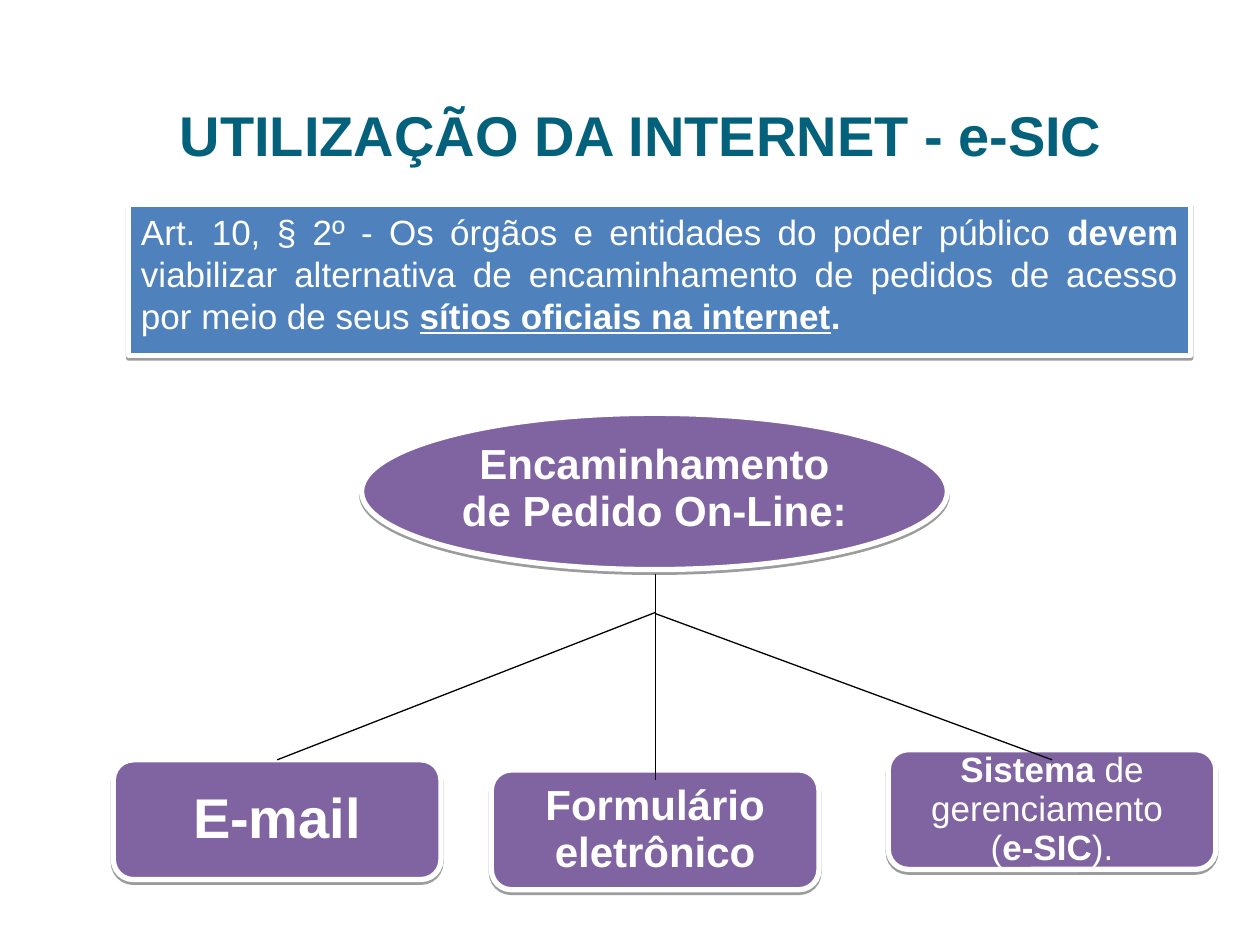
from lxml.etree import SubElement
from pptx import Presentation
from pptx.dml.color import RGBColor
from pptx.enum.shapes import MSO_CONNECTOR as Connector, MSO_SHAPE as Shape
from pptx.enum.text import MSO_ANCHOR as Anchor, MSO_AUTO_SIZE as AutoSize, PP_ALIGN as Align
from pptx.oxml.ns import qn
from pptx.util import Pt

COLORS = {
    "title": "04617B",
    "article": "4F81BD",
    "node": "8064A2",
    "white": "FFFFFF",
    "black": "000000",
}


class SlideBuilder:
    font_name = "Arial"
    outline_width = 3
    connector_width = 0.75
    node_spacing = 0.93

    def __init__(self, slide):
        self.slide = slide

    def color(self, name):
        return RGBColor.from_string(COLORS[name])

    def format_run(self, run, size, color, bold=False, underline=None):
        run.font.name = self.font_name
        run.font.size = Pt(size)
        run.font.color.rgb = self.color(color)
        run.font.bold = bold
        run.font.underline = underline

    def title(self, text, left, top, width, height, size):
        title = self.slide.shapes.title
        title.left, title.top, title.width, title.height = map(Pt, (left, top, width, height))
        frame = title.text_frame
        frame.text = text
        frame.auto_size = AutoSize.NONE
        frame.word_wrap = False
        frame.vertical_anchor = Anchor.MIDDLE
        paragraph = frame.paragraphs[0]
        paragraph.alignment = Align.CENTER
        self.format_run(paragraph.runs[0], size, "title", bold=True)

    def add_shadow(self, shape):
        shape.shadow.inherit = False
        effects = shape.element.spPr.find(qn("a:effectLst"))
        shadow = SubElement(effects, qn("a:outerShdw"), dist=str(Pt(1.6)),
                            dir="5400000", rotWithShape="0")
        color = SubElement(shadow, qn("a:srgbClr"), val=COLORS["black"])
        SubElement(color, qn("a:alpha"), val="38000")

    def box(self, kind, left, top, width, height, fill, paragraphs, size,
            anchor=Anchor.MIDDLE, align=Align.CENTER, spacing=None):
        shape = self.slide.shapes.add_shape(kind, *map(Pt, (left, top, width, height)))
        shape.fill.solid()
        shape.fill.fore_color.rgb = self.color(fill)
        shape.line.color.rgb = self.color("white")
        shape.line.width = Pt(self.outline_width)
        self.add_shadow(shape)
        frame = shape.text_frame
        frame.word_wrap = True
        frame.vertical_anchor = anchor
        for index, parts in enumerate(paragraphs):
            paragraph = frame.add_paragraph() if index else frame.paragraphs[0]
            paragraph.alignment = align
            paragraph.line_spacing = spacing
            for text, bold, underline in parts:
                run = paragraph.add_run()
                run.text = text
                self.format_run(run, size, "white", bold, underline)
        return shape

    def node(self, kind, left, top, width, height, paragraphs, size, anchor=Anchor.MIDDLE):
        return self.box(kind, left, top, width, height, "node", paragraphs, size,
                        anchor=anchor, spacing=self.node_spacing)

    def connector(self, start, end, start_shape=None):
        line = self.slide.shapes.add_connector(Connector.STRAIGHT, *map(Pt, start + end))
        line.line.color.rgb = self.color("black")
        line.line.width = Pt(self.connector_width)
        SubElement(line.element.spPr, qn("a:effectLst"))
        if start_shape is not None:
            line.begin_connect(start_shape, 0)


def main():
    presentation = Presentation()
    presentation.slide_width, presentation.slide_height = Pt(720), Pt(540)
    builder = SlideBuilder(presentation.slides.add_slide(presentation.slide_layouts[5]))

    builder.title("UTILIZAÇÃO DA INTERNET - e-SIC", 60.5, 55.5, 612, 42, 32)
    article = [[
        ("Art. 10, § 2º - Os órgãos e entidades do poder público ", False, None),
        ("devem", True, None),
        (" viabilizar alternativa de encaminhamento de pedidos de acesso por meio de seus ",
         False, None),
        ("sítios oficiais na internet", True, True),
        (".", True, None),
    ]]
    builder.box(Shape.RECTANGLE, 73.5, 116.7, 607, 86.4, "article", article, 20,
                anchor=Anchor.TOP, align=Align.JUSTIFY)

    channels = [
        (64.8, 434.2, 32, [[("E-mail", True, None)]]),
        (280.8, 440, 24, [[("Formulário eletrônico", True, None)]]),
        (507.6, 428.4, 20, [
            [("Sistema", True, None), (" de gerenciamento ", False, None)],
            [("(", False, None), ("e-SIC", True, None), (").", False, None)],
        ]),
    ]
    email, form, system = [
        builder.node(Shape.ROUNDED_RECTANGLE, left, top, 187.2, 68.4, paragraphs, size)
        for left, top, size, paragraphs in channels
    ]

    center = 374.4
    builder.connector((158.4, 434.2), (center, 350), email)
    builder.connector((center, 328.3), (center, 445.7))
    builder.connector((center, 350.6), (601.2, 434.2))

    request = [[("Encaminhamento de Pedido On-Line:", True, None)]]
    builder.node(Shape.OVAL, 206.6, 236.2, 334.8, 89.3, request, 24, anchor=Anchor.TOP)

    presentation.save("out.pptx")


if __name__ == "__main__":
    main()
